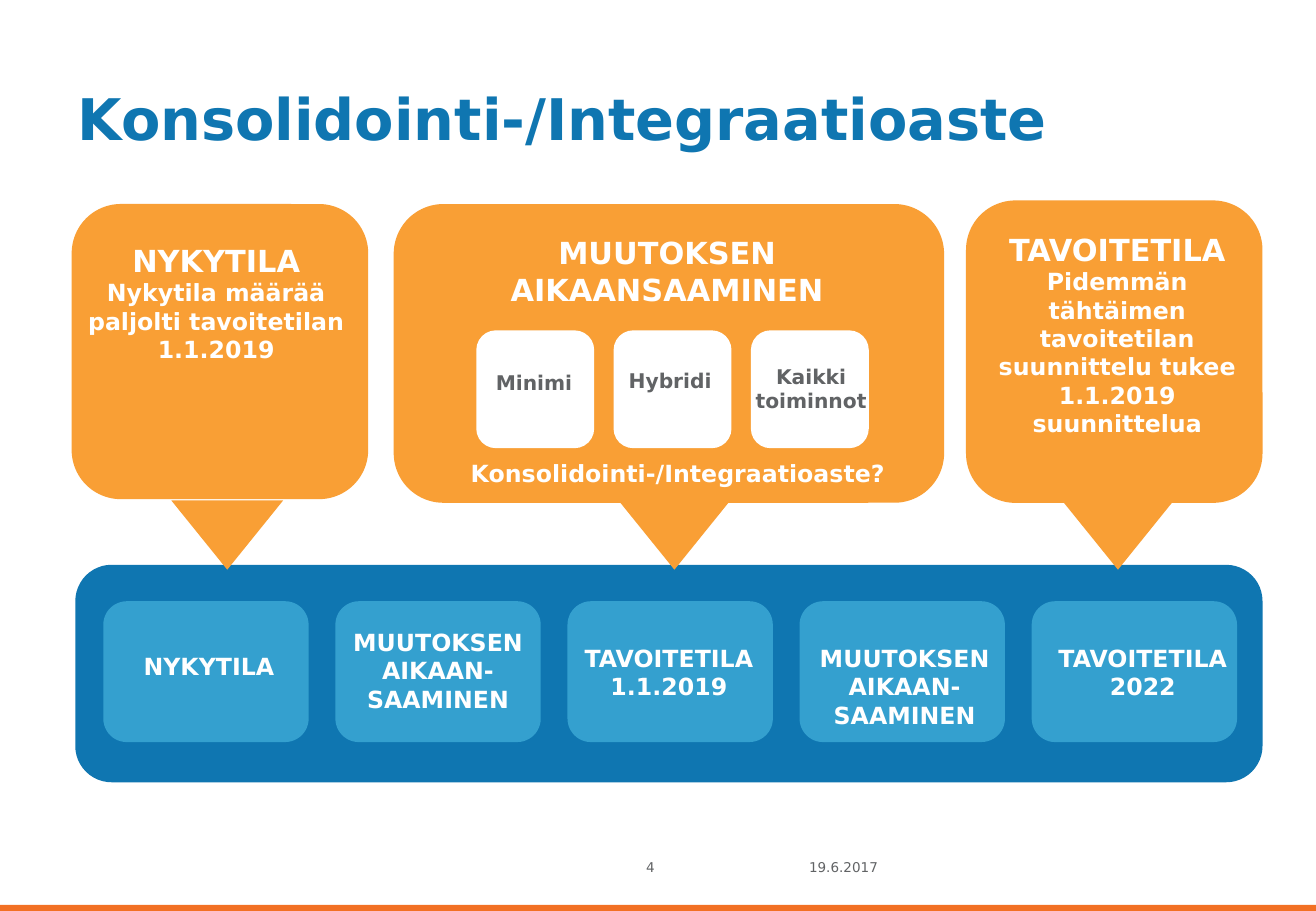
from pptx import Presentation
from pptx import util as u
from pptx.dml.color import RGBColor
from pptx.enum import shapes, text

FONT = "DejaVu Sans"
ORANGE, BLUE, SKY, WHITE, GREY = "F99F35", "0F76B1", "34A0CF", "FFFFFF", "616365"
ROUNDED = shapes.MSO_SHAPE.ROUNDED_RECTANGLE

deck = Presentation()
deck.slide_width, deck.slide_height = u.Inches(10.83), u.Inches(7.5)
page = deck.slides.add_slide(deck.slide_layouts[5])


def add_block(kind, left, top, width, height, color):
    block = page.shapes.add_shape(kind, *map(u.Inches, (left, top, width, height)))
    block.shadow.inherit = False
    block.fill.solid()
    block.fill.fore_color.rgb = RGBColor.from_string(color)
    block.line.fill.background()
    return block


def write(box, lines, color, bold=True, align=text.PP_ALIGN.CENTER):
    """Fill a box with (wording, size) lines, one paragraph each."""
    frame = box.text_frame
    frame.word_wrap = True
    frame.text = "\n".join(wording for wording, size in lines)
    for para, (wording, size) in zip(frame.paragraphs, lines):
        para.alignment = align
        para.font.name, para.font.size, para.font.bold = FONT, u.Pt(size), bold
        para.font.color.rgb = RGBColor.from_string(color)


# Title
title = page.shapes.title
title.left, title.top, title.width, title.height = map(u.Inches, (0.54, 0.34, 9.75, 1.25))
write(title, [("Konsolidointi-/Integraatioaste", 34)], BLUE, align=text.PP_ALIGN.LEFT)
title.text_frame.auto_size = text.MSO_AUTO_SIZE.NONE
title.text_frame.vertical_anchor = text.MSO_ANCHOR.MIDDLE

# Timeline bar with five evenly spaced stages
add_block(ROUNDED, 0.62, 4.65, 9.77, 1.79, BLUE)
for column in range(5):
    add_block(ROUNDED, 0.85 + 1.91 * column, 4.95, 1.69, 1.16, SKY)

# Callouts with tips pointing down at the bar
for left, top, width, height, tip_left in [
    (0.59, 1.68, 2.44, 2.43, 1.41),
    (3.24, 1.68, 4.53, 2.46, 5.09),
    (7.95, 1.65, 2.44, 2.49, 8.74),
]:
    add_block(ROUNDED, left, top, width, height, ORANGE)
    tip = add_block(shapes.MSO_SHAPE.ISOSCELES_TRIANGLE, tip_left, 4.12, 0.92, 0.57, ORANGE)
    tip.rotation = 180

# Three options inside the middle callout
for column in range(3):
    add_block(ROUNDED, 3.92 + 1.13 * column, 2.72, 0.97, 0.97, WHITE)

# Labels: left, top, width, height, colour, lines
for left, top, width, height, color, lines in [
    (0.56, 1.94, 2.44, 1.11, WHITE,
     [("NYKYTILA", 18), ("Nykytila määrää", 14), ("paljolti tavoitetilan 1.1.2019", 14)]),
    (3.04, 1.88, 4.9, 0.71, WHITE, [("MUUTOKSEN", 18), ("AIKAANSAAMINEN", 18)]),
    (8.03, 1.85, 2.33, 1.82, WHITE,
     [("TAVOITETILA", 18),
      ("Pidemmän tähtäimen tavoitetilan suunnittelu tukee 1.1.2019", 14),
      ("suunnittelua", 14)]),
    (3.95, 3, 0.89, 0.3, GREY, [("Minimi", 12)]),
    (5.02, 2.98, 0.99, 0.3, GREY, [("Hybridi", 12)]),
    (6.07, 2.95, 1.21, 0.5, GREY, [("Kaikki toiminnot", 12)]),
    (3.13, 3.73, 4.9, 0.34, WHITE, [("Konsolidointi-/Integraatioaste?", 14)]),
    (0.75, 5.32, 1.94, 0.34, WHITE, [("NYKYTILA", 14)]),
    (2.74, 5.12, 1.73, 0.81, WHITE, [("MUUTOKSEN AIKAAN-SAAMINEN", 14)]),
    (4.52, 5.25, 1.97, 0.57, WHITE, [("TAVOITETILA", 14), ("1.1.2019", 14)]),
    (6.46, 5.25, 1.97, 0.81, WHITE, [("MUUTOKSEN AIKAAN-SAAMINEN", 14)]),
    (8.42, 5.25, 1.97, 0.57, WHITE, [("TAVOITETILA", 14), ("2022", 14)]),
]:
    label = page.shapes.add_textbox(*map(u.Inches, (left, top, width, height)))
    write(label, lines, color)

# Footer: page number, date and bottom stripe
for left, wording in [(5.22, "4"), (6.56, "19.6.2017")]:
    footer = page.shapes.add_textbox(*map(u.Inches, (left, 7.02, 0.96, 0.4)))
    write(footer, [(wording, 8)], GREY, bold=False, align=text.PP_ALIGN.LEFT)
add_block(shapes.MSO_SHAPE.RECTANGLE, 0, 7.45, 10.83, 0.05, "F27024")

deck.save("out.pptx")
